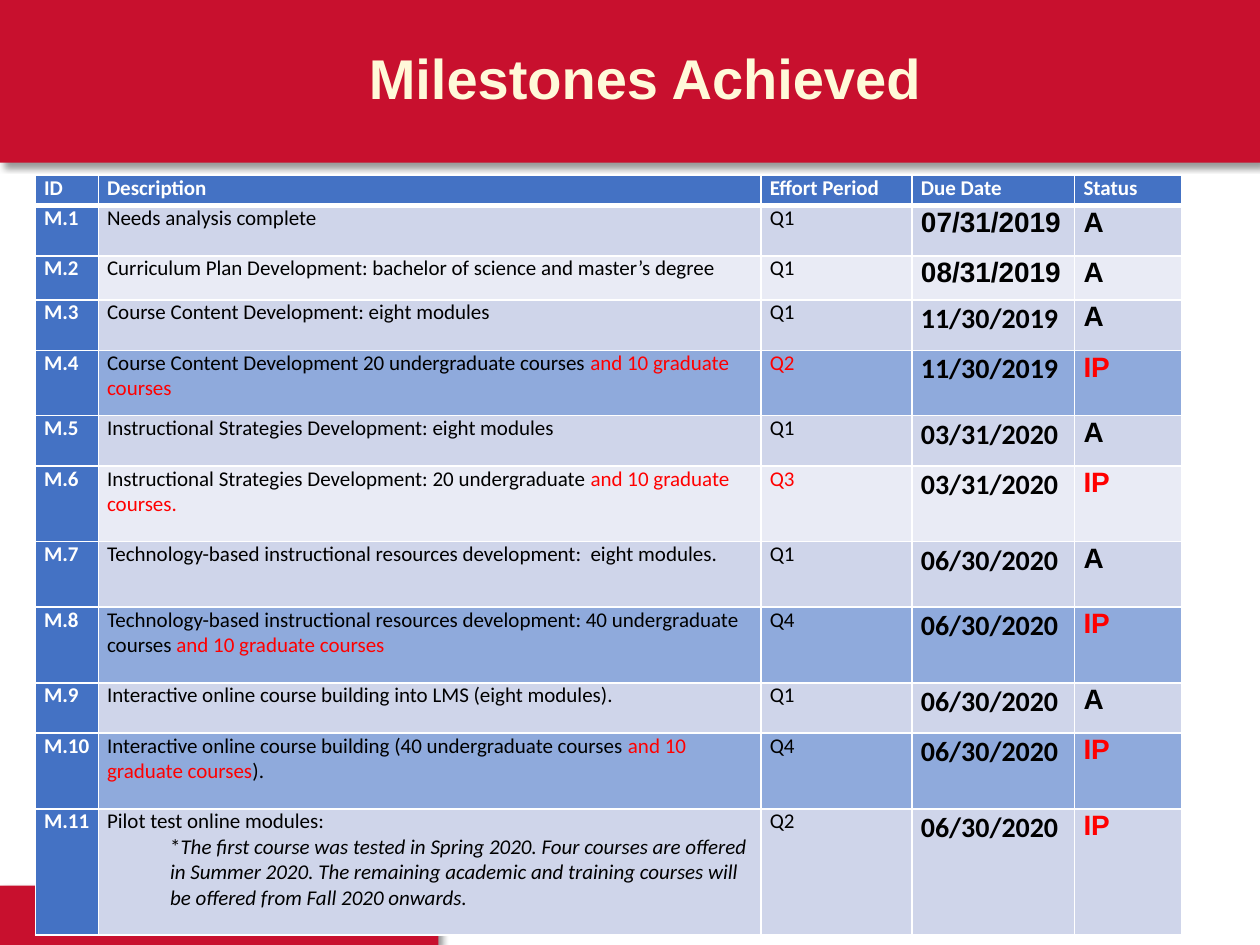
import lxml.etree
import pptx
import pptx.dml.color
import pptx.enum.shapes
import pptx.enum.text
import pptx.oxml.ns
import pptx.util

Inches = pptx.util.Inches
RGBColor = pptx.dml.color.RGBColor
ALIGN = pptx.enum.text.PP_ALIGN
qn = pptx.oxml.ns.qn

CRIMSON = RGBColor(0xC8, 0x10, 0x2E)
CREAM = RGBColor(0xFF, 0xF9, 0xD9)
WHITE = RGBColor(0xFF, 0xFF, 0xFF)
BLACK = RGBColor(0, 0, 0)
RED = RGBColor(0xFF, 0, 0)
BLUE = RGBColor(0x44, 0x72, 0xC4)
BAND = RGBColor(0xCF, 0xD5, 0xEA)
PALE = RGBColor(0xE9, 0xEB, 0xF5)
ACTIVE = RGBColor(0x8F, 0xAA, 0xDC)


def write(p, text, size=12, font="Calibri", color=BLACK, bold=False, italic=False):
    r = p.add_run()
    r.text = text
    r.font.size = pptx.util.Pt(size)
    r.font.name = font
    r.font.color.rgb = color
    r.font.bold = bold
    r.font.italic = italic


def style_cell(cell, fill, bottom=1):
    cell.margin_left = cell.margin_right = Inches(0.07)
    cell.margin_top = cell.margin_bottom = 0
    tc_pr = cell._tc.get_or_add_tcPr()
    for side, width in (("L", 1), ("R", 1), ("T", 1), ("B", bottom)):
        ln = lxml.etree.SubElement(tc_pr, qn("a:ln" + side), w=str(pptx.util.Pt(width)))
        solid = lxml.etree.SubElement(ln, qn("a:solidFill"))
        lxml.etree.SubElement(solid, qn("a:srgbClr"), val=str(WHITE))
    cell.fill.solid()
    cell.fill.fore_color.rgb = fill


prs = pptx.Presentation()
prs.slide_width = Inches(10)
prs.slide_height = Inches(7.5)
slide = prs.slides.add_slide(prs.slide_layouts[5])

# Red bands at the top and bottom, with soft shadows
title = slide.shapes.title
for top, width, height in ((0, 10, 1.29), (7.03, 3.48, 0.47)):
    s = slide.shapes.add_shape(pptx.enum.shapes.MSO_SHAPE.RECTANGLE,
                               0, Inches(top), Inches(width), Inches(height))
    s.fill.solid()
    s.fill.fore_color.rgb = CRIMSON
    s.line.fill.background()
    s.shadow.inherit = False
    shadow = lxml.etree.SubElement(
        s._element.spPr.find(qn("a:effectLst")), qn("a:outerShdw"),
        blurRad=str(pptx.util.Pt(4)), dist=str(pptx.util.Pt(3)),
        dir=str(45 * 60000), algn="tl", rotWithShape="0")
    color = lxml.etree.SubElement(shadow, qn("a:srgbClr"), val=str(BLACK))
    lxml.etree.SubElement(color, qn("a:alpha"), val="40000")

# Title, brought in front of the top band
slide.shapes._spTree.append(title._element)
title.left, title.top = Inches(1.12), Inches(0.29)
title.width, title.height = Inches(8), Inches(0.64)
p = title.text_frame.paragraphs[0]
p.alignment = ALIGN.CENTER
write(p, "Milestones Achieved", size=32, font="Arial", color=CREAM, bold=True)

# Milestones: row height, fill, description runs, effort period, due date, status
headings = ["ID", "Description", "Effort Period", "Due Date", "Status"]
grads = ("and 10 graduate courses", RED)
milestones = [
    (0.4, BAND, [("Needs analysis complete", BLACK)], "Q1", "07/31/2019", "A"),
    (0.35, PALE, [("Curriculum Plan Development: bachelor of science and master’s degree", BLACK)],
     "Q1", "08/31/2019", "A"),
    (0.4, BAND, [("Course Content Development: eight modules", BLACK)], "Q1", "11/30/2019", "A"),
    (0.52, ACTIVE, [("Course Content Development 20 undergraduate courses ", BLACK), grads],
     "Q2", "11/30/2019", "IP"),
    (0.4, BAND, [("Instructional Strategies Development: eight modules", BLACK)],
     "Q1", "03/31/2020", "A"),
    (0.6, PALE, [("Instructional Strategies Development: 20 undergraduate ", BLACK),
                 ("and 10 graduate courses.", RED)], "Q3", "03/31/2020", "IP"),
    (0.52, BAND, [("Technology-based instructional resources development:  eight modules.", BLACK)],
     "Q1", "06/30/2020", "A"),
    (0.6, ACTIVE, [("Technology-based instructional resources development: "
                    "40 undergraduate courses ", BLACK), grads], "Q4", "06/30/2020", "IP"),
    (0.4, BAND, [("Interactive online course building into LMS (eight modules).", BLACK)],
     "Q1", "06/30/2020", "A"),
    (0.6, ACTIVE, [("Interactive online course building (40 undergraduate courses ", BLACK),
                   grads, (").", BLACK)], "Q4", "06/30/2020", "IP"),
    (1.0, BAND, [("Pilot test online modules:", BLACK)], "Q2", "06/30/2020", "IP"),
]
heights = [0.24] + [m[0] for m in milestones]
widths = [0.5, 5.26, 1.2, 1.29, 0.85]
table = slide.shapes.add_table(len(heights), len(widths), Inches(0.28), Inches(1.39),
                               Inches(sum(widths)), Inches(sum(heights))).table
for column, width in zip(table.columns, widths):
    column.width = Inches(width)
for row, height in zip(table.rows, heights):
    row.height = Inches(height)

# Header row
for col, heading in enumerate(headings):
    cell = table.cell(0, col)
    style_cell(cell, BLUE, bottom=3)
    write(cell.text_frame.paragraphs[0], heading, color=WHITE, bold=True)

# Milestone rows
for row, (height, fill, description, period, due, status) in enumerate(milestones, 1):
    cells = [table.cell(row, col) for col in range(len(widths))]
    for col, cell in enumerate(cells):
        style_cell(cell, fill if col else BLUE)
    ps = [cell.text_frame.paragraphs[0] for cell in cells]
    write(ps[0], f"M.{row}", color=WHITE, bold=True)
    for text, color in description:
        write(ps[1], text, color=color)
    write(ps[2], period, color=RED if row in (4, 6) else BLACK)
    write(ps[3], due, size=16, font="Arial" if row < 3 else "Calibri", bold=True)
    write(ps[4], status, size=16, font="Arial", color=RED if status == "IP" else BLACK, bold=True)
    for p in ps[3:]:
        p.alignment = ALIGN.JUSTIFY
        p.line_spacing = 1.05

# Indented remark under the last milestone
p = table.cell(len(milestones), 1).text_frame.add_paragraph()
p.level = 1
p._p.get_or_add_pPr().set("marL", str(Inches(0.5)))
p._p.get_or_add_pPr().set("indent", "0")
write(p, "*")
write(p, "The first course was tested in Spring 2020. Four courses are offered in Summer 2020. "
         "The remaining academic and training courses will be offered from Fall 2020 onwards.",
      italic=True)

prs.save("out.pptx")
